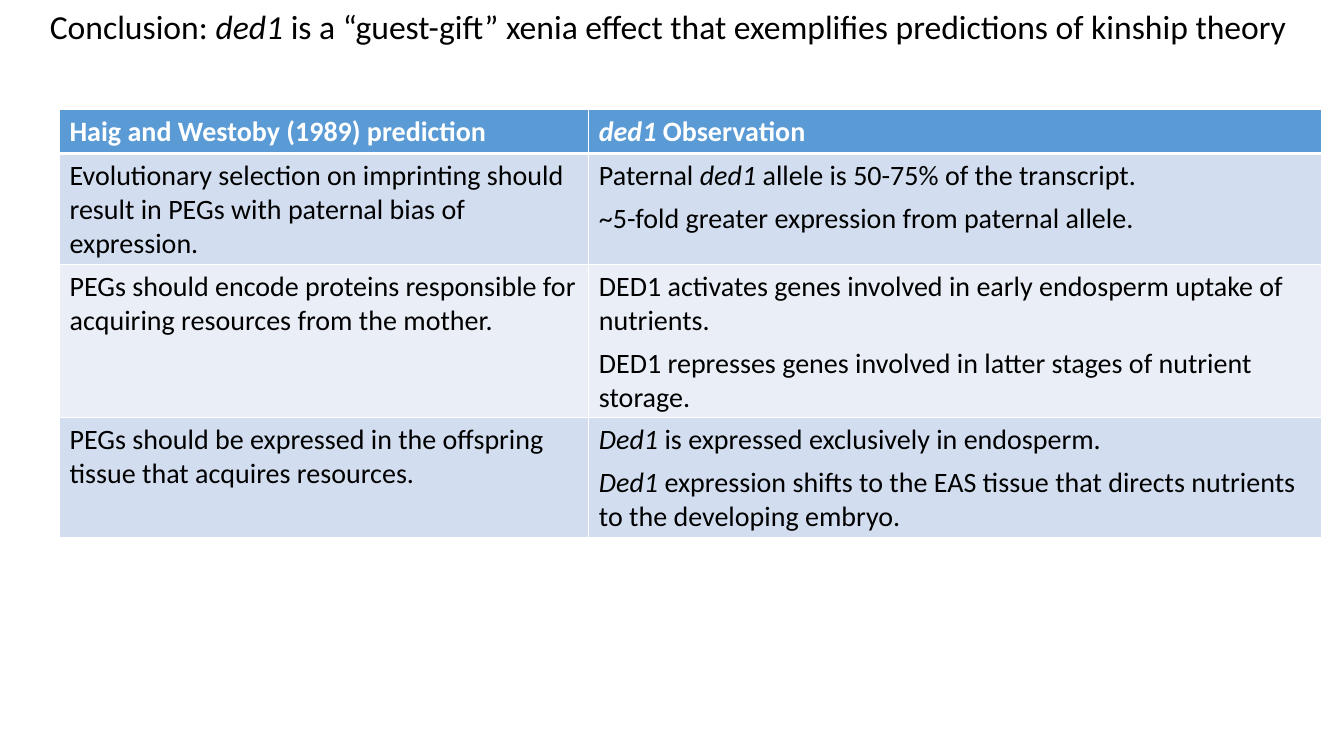
from lxml.etree import SubElement
from pptx import Presentation
from pptx.dml.color import RGBColor
from pptx.enum.text import MSO_AUTO_SIZE, PP_ALIGN
from pptx.oxml.ns import qn
from pptx.util import Inches, Pt

# Content: text between asterisks is italic
TITLE = "Conclusion: *ded1* is a “guest-gift” xenia effect that exemplifies predictions of kinship theory "
ROWS = [
    (["Haig and Westoby (1989) prediction"], ["*ded1 *Observation"]),
    (["Evolutionary selection on imprinting should result in PEGs with paternal bias of expression."],
     ["Paternal *ded1* allele is 50-75% of the transcript.",
      "~5-fold greater expression from paternal allele."]),
    (["PEGs should encode proteins responsible for acquiring resources from the mother."],
     ["DED1 activates genes involved in early endosperm uptake of nutrients.",
      "DED1 represses genes involved in latter stages of nutrient storage."]),
    (["PEGs should be expressed in the offspring tissue that acquires resources."],
     ["*Ded1* is expressed exclusively in endosperm.",
      "*Ded1* expression shifts to the EAS tissue that directs nutrients to the developing embryo."]),
]
COLUMN_WIDTHS = [5.25, 7.27]
ROW_HEIGHTS = [0.43, 1.1, 1.52, 1.18]
WHITE, BLACK, HEADER = "FFFFFF", "000000", "5B9BD5"
BANDS = ["EAEFF7", "D2DEEF"]


def color(value):
    return RGBColor.from_string(value)


def write(frame, lines, size=20, ink=BLACK, bold=False, align=PP_ALIGN.LEFT, gap=6):
    frame.word_wrap = True
    for index, line in enumerate(lines):
        para = frame.add_paragraph() if index else frame.paragraphs[0]
        para.alignment = align
        if index < len(lines) - 1:
            para.space_after = Pt(gap)
        for part, text in enumerate(line.split("*")):
            if text:
                span = para.add_run()
                span.text = text
                span.font.name = "Calibri"
                span.font.size = Pt(size)
                span.font.bold = bold
                span.font.italic = part % 2 == 1
                span.font.color.rgb = color(ink)


def set_borders(cell, widths):
    properties = cell._tc.get_or_add_tcPr()
    for position, (side, width) in enumerate(widths.items()):
        line = SubElement(properties, qn(f"a:{side}"), w=str(Pt(width)))
        fill = SubElement(line, qn("a:solidFill"))
        SubElement(fill, qn("a:srgbClr"), val=WHITE)
        # Border lines come before the cell fill
        properties.insert(position, line)


deck = Presentation()
deck.slide_width, deck.slide_height = Inches(13.33), Inches(7.5)
page = deck.slides.add_slide(deck.slide_layouts[6])

# Title
box = page.shapes.add_textbox(0, Inches(0.01), deck.slide_width, Inches(0.5))
write(box.text_frame, [TITLE], size=24, align=PP_ALIGN.CENTER)
box.text_frame.auto_size = MSO_AUTO_SIZE.SHAPE_TO_FIT_TEXT

# Table of predictions and observations
table = page.shapes.add_table(
    len(ROWS), len(COLUMN_WIDTHS), Inches(0.59), Inches(1.09),
    Inches(sum(COLUMN_WIDTHS)), Inches(sum(ROW_HEIGHTS))).table
for column, width in zip(table.columns, COLUMN_WIDTHS):
    column.width = Inches(width)
for row, height in zip(table.rows, ROW_HEIGHTS):
    row.height = Inches(height)

for row_index, row in enumerate(ROWS):
    is_header = row_index == 0
    for column_index, lines in enumerate(row):
        cell = table.cell(row_index, column_index)
        cell.fill.solid()
        cell.fill.fore_color.rgb = color(HEADER if is_header else BANDS[row_index % 2])
        write(cell.text_frame, lines, ink=WHITE if is_header else BLACK, bold=is_header)
        set_borders(cell, {"lnL": 1, "lnR": 1, "lnT": 3 if row_index == 1 else 1,
                           "lnB": 3 if is_header else 1})

deck.save("out.pptx")
